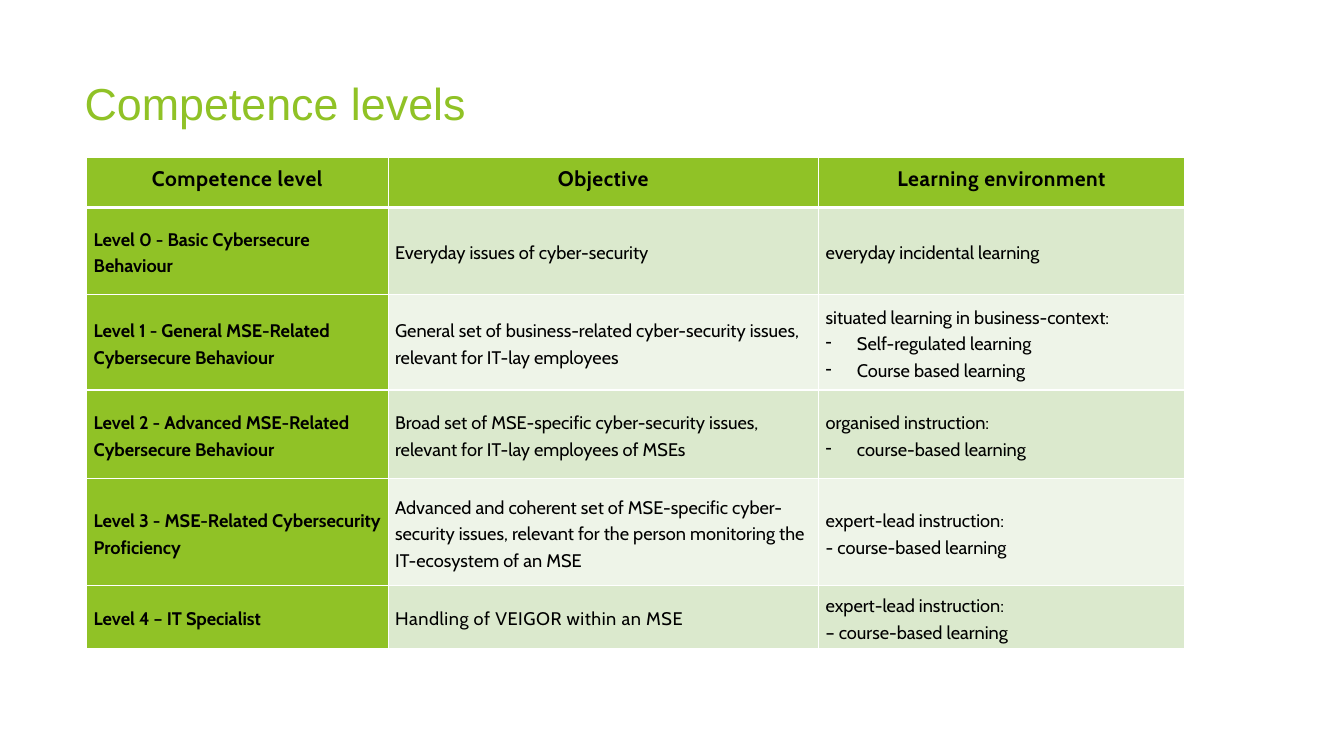
"""Build the slide with the table of competence levels."""
from lxml import etree
from pptx import Presentation
from pptx.dml.color import RGBColor
from pptx.enum.text import MSO_ANCHOR, PP_ALIGN
from pptx.oxml.ns import qn
from pptx.util import Inches, Pt

MIDDLE = MSO_ANCHOR.MIDDLE
CENTER = PP_ALIGN.CENTER
GREEN, BLACK = "90C226", "000000"
BANDS = ["EEF4E8", "DBE9CD"]
COLUMN_WIDTHS = [2.99, 4.27, 3.63]
ROW_HEIGHTS = [0.5, 0.86, 0.95, 0.88, 1.06, 0.63]
BULLET = "• "
SPACED_TEXT = "Handling of VEIGOR within an MSE"
ROWS = [
    ["Competence level", "Objective", "Learning environment"],
    ["Level 0 - Basic Cybersecure Behaviour",
     "Everyday issues of cyber-security",
     "everyday incidental learning"],
    ["Level 1 - General MSE-Related Cybersecure Behaviour",
     "General set of business-related cyber-security issues, relevant for IT-lay employees",
     "situated learning in business-context:\n• Self-regulated learning\n• Course based learning"],
    ["Level 2 - Advanced MSE-Related Cybersecure Behaviour",
     "Broad set of MSE-specific cyber-security issues, relevant for IT-lay employees of MSEs",
     "organised instruction:\n• course-based learning"],
    ["Level 3 - MSE-Related Cybersecurity Proficiency",
     "Advanced and coherent set of MSE-specific cyber-security issues, "
     "relevant for the person monitoring the IT-ecosystem of an MSE",
     "expert-lead instruction:\v- course-based learning"],
    ["Level 4 – IT Specialist",
     SPACED_TEXT,
     "expert-lead instruction:\v– course-based learning"],
]


def add_text(paragraph, text, font_name, size, color, bold=False):
    """Add text as runs, with a line break at each vertical tab."""
    for index, line in enumerate(text.split("\v")):
        if index:
            paragraph.add_line_break()
        run = paragraph.add_run()
        run.text = line
        run.font.name = font_name
        run.font.size = Pt(size)
        run.font.bold = bold
        run.font.color.rgb = RGBColor.from_string(color)
    return run


def set_borders(cell, bottom_width):
    """Draw white lines around a cell."""
    properties = cell._tc.get_or_add_tcPr()
    for index, side in enumerate(["lnL", "lnR", "lnT", "lnB"]):
        width = bottom_width if side == "lnB" else 1
        line = etree.Element(qn(f"a:{side}"), w=str(Pt(width)))
        fill = etree.SubElement(line, qn("a:solidFill"))
        etree.SubElement(fill, qn("a:srgbClr"), val="FFFFFF")
        properties.insert(index, line)


presentation = Presentation()
presentation.slide_width = Inches(13.33)
presentation.slide_height = Inches(7.5)
slide = presentation.slides.add_slide(presentation.slide_layouts[6])

title = slide.shapes.add_textbox(Inches(0.74), Inches(0.69), Inches(4.61), Inches(0.65))
title.text_frame.word_wrap = True
title.text_frame.vertical_anchor = MIDDLE
add_text(title.text_frame.paragraphs[0], "Competence levels", "Arial", 32, GREEN)

table = slide.shapes.add_table(
    len(ROWS), len(COLUMN_WIDTHS), Inches(0.86), Inches(1.56),
    Inches(sum(COLUMN_WIDTHS)), Inches(sum(ROW_HEIGHTS))).table
for column, width in zip(table.columns, COLUMN_WIDTHS):
    column.width = Inches(width)

for row_index, (texts, height) in enumerate(zip(ROWS, ROW_HEIGHTS)):
    table.rows[row_index].height = Inches(height)
    is_header = row_index == 0
    for column_index, text in enumerate(texts):
        cell = table.cell(row_index, column_index)
        is_green = is_header or column_index == 0
        cell.vertical_anchor = MIDDLE
        cell.margin_left = cell.margin_right = Inches(0.07)
        cell.margin_top = cell.margin_bottom = 0
        cell.fill.solid()
        cell.fill.fore_color.rgb = RGBColor.from_string(GREEN if is_green else BANDS[row_index % 2])
        set_borders(cell, 3 if is_header else 1)

        for line_index, line in enumerate(text.split("\n")):
            frame = cell.text_frame
            paragraph = frame.add_paragraph() if line_index else frame.paragraphs[0]
            paragraph.line_spacing = Pt(13.5) if is_header else 1.2
            if is_header:
                paragraph.alignment = CENTER
            if line.startswith(BULLET):
                properties = paragraph._p.get_or_add_pPr()
                properties.set("marL", str(Inches(0.31)))
                properties.set("indent", str(Inches(-0.31)))
                etree.SubElement(properties, qn("a:buChar"), char="-")
            run = add_text(paragraph, line.removeprefix(BULLET), "Cabin",
                           15 if is_header else 13, BLACK, is_green)
            if is_header or line == SPACED_TEXT:
                run.font._element.set("spc", "40")

presentation.save("out.pptx")
